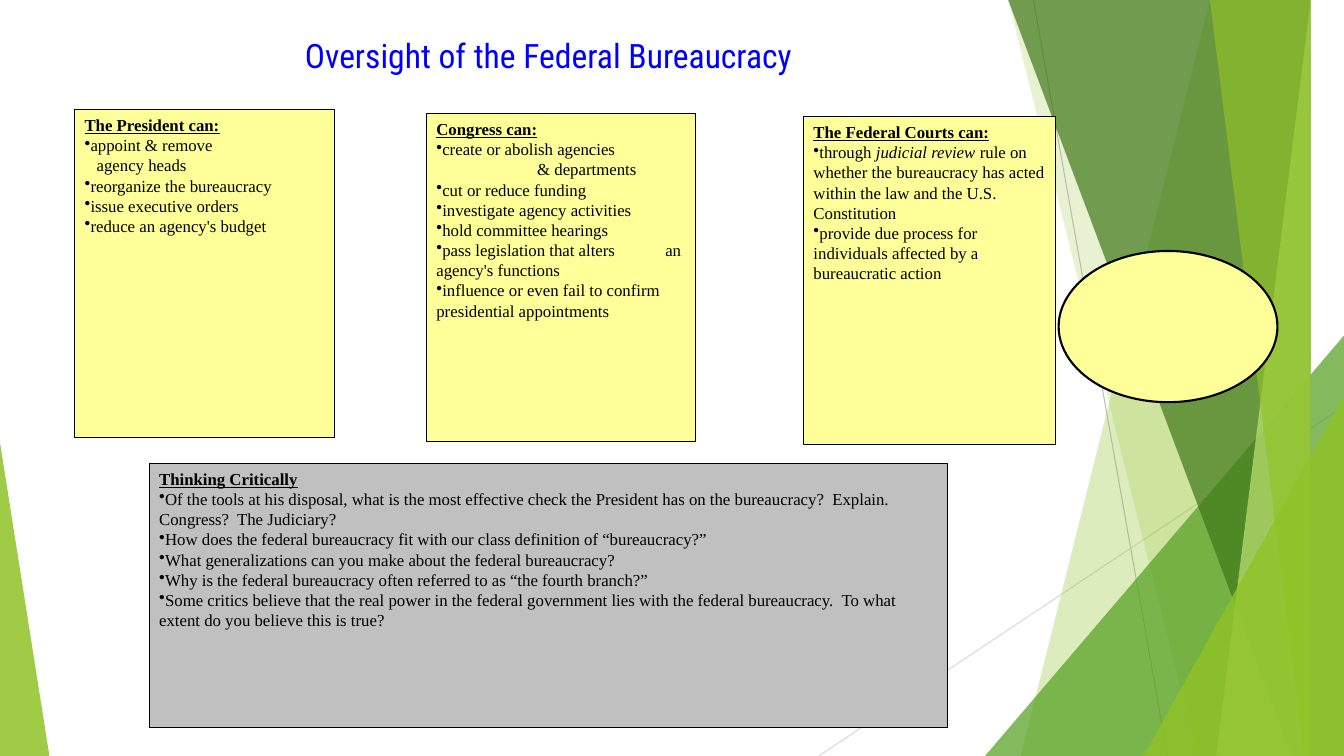
from lxml import etree
from pptx import Presentation
from pptx.dml.color import RGBColor
from pptx.enum.shapes import MSO_CONNECTOR, MSO_SHAPE
from pptx.enum.text import MSO_ANCHOR, MSO_AUTO_SIZE, PP_ALIGN
from pptx.oxml.ns import qn
from pptx.util import Inches, Pt

STRAIGHT = MSO_CONNECTOR.STRAIGHT
TRIANGLE, RECTANGLE, OVAL = MSO_SHAPE.ISOSCELES_TRIANGLE, MSO_SHAPE.RECTANGLE, MSO_SHAPE.OVAL
TOP, MIDDLE = MSO_ANCHOR.TOP, MSO_ANCHOR.MIDDLE
LEFT, CENTER = PP_ALIGN.LEFT, PP_ALIGN.CENTER
NO_AUTOFIT = MSO_AUTO_SIZE.NONE

BLACK = RGBColor(0x00, 0x00, 0x00)
BLUE = RGBColor(0x00, 0x00, 0xFF)
YELLOW = RGBColor(0xFF, 0xFF, 0x99)
GRAY = RGBColor(0xC0, 0xC0, 0xC0)
LINE_GRAY = RGBColor(0xBF, 0xBF, 0xBF)
LINE_PALE = RGBColor(0xD9, 0xD9, 0xD9)
LIME = RGBColor(0x90, 0xC2, 0x26)
GREEN = RGBColor(0x54, 0xA0, 0x21)
DARK_GREEN = RGBColor(0x3F, 0x78, 0x19)
PALE_LIME = RGBColor(0xC0, 0xE4, 0x74)

WIDTH, HEIGHT = 13.33, 7.5


def style_shape(s, color, opacity=100, line_width=None):
    s.shadow.inherit = False
    s.fill.solid()
    s.fill.fore_color.rgb = color
    if opacity < 100:
        srgb = s.fill._xPr.find(".//" + qn("a:srgbClr"))
        etree.SubElement(srgb, qn("a:alpha"), val=str(opacity * 1000))
    if line_width:
        s.line.color.rgb = BLACK
        s.line.width = Pt(line_width)
    else:
        s.line.fill.background()


def add_text(p, text, font="Times New Roman", size=12, color=BLACK, bold=False,
             underline=False, italic=False):
    """Add a formatted run; a newline becomes a line break."""
    for i, line in enumerate(text.split("\n")):
        if i:
            p.add_line_break()
        r = p.add_run()
        r.text = line
        r.font.name, r.font.size = font, Pt(size)
        r.font.bold, r.font.underline, r.font.italic = bold, underline, italic
        r.font.color.rgb = color
    return r


prs = Presentation()
prs.slide_width, prs.slide_height = Inches(WIDTH), Inches(HEIGHT)
slide = prs.slides.add_slide(prs.slide_layouts[5])
shapes = slide.shapes

# Background rays
for x1, y1, x2, y2, color in [(10.25, 0, 11.58, HEIGHT, LINE_GRAY),
                              (WIDTH, 4.03, 8.12, HEIGHT, LINE_PALE)]:
    ray = shapes.add_connector(STRAIGHT, Inches(x1), Inches(y1), Inches(x2), Inches(y2))
    ray.line.color.rgb = color
    ray.line.width = Pt(0.75)
    etree.SubElement(ray._element.spPr, qn("a:effectLst"))

# Bands reach the right edge: top-left x, bottom-left x, colour, opacity.
# Triangles: left, top, width, apex position, colour, opacity.
facets = [
    (12.28, 10.04, LIME, 30),
    (10.5, 11.83, LIME, 20),
    (9.77, 3.33, 3.56, 1, GREEN, 72),
    (10.21, 12.91, DARK_GREEN, 70),
    (13.03, 11.92, PALE_LIME, 70),
    (11.96, 13.18, LIME, 65),
    (11.34, 3.93, 1.99, 1, LIME, 80),
    (0, 4.39, 0.49, 0, LIME, 85),
]
for *geometry, color, opacity in facets:
    if len(geometry) == 2:
        top_x, bottom_x = geometry
        band = shapes.build_freeform(top_x, 0, scale=Inches(1))
        band.add_line_segments([(WIDTH, 0), (WIDTH, HEIGHT), (bottom_x, HEIGHT)])
        s = band.convert_to_shape()
    else:
        x, y, w, apex = geometry
        s = shapes.add_shape(TRIANGLE, Inches(x), Inches(y), Inches(w), Inches(HEIGHT - y))
        s.adjustments[0] = apex
    style_shape(s, color, opacity)

oval = shapes.add_shape(OVAL, Inches(10.5), Inches(2.49), Inches(2.17), Inches(1.5))
style_shape(oval, YELLOW, line_width=1.5)

# Title
title = shapes.title
title.left, title.top, title.width, title.height = map(Inches, (2.65, 0.3, 5.58, 0.5))
tf = title.text_frame
tf.word_wrap, tf.auto_size, tf.vertical_anchor = False, NO_AUTOFIT, MIDDLE
p = tf.paragraphs[0]
p.alignment = CENTER
add_text(p, "Oversight of the Federal Bureaucracy", font="Roboto Condensed", size=24, color=BLUE)

# Boxes: left, top, width, height, fill, tab stops, heading, bullets.
# Asterisks enclose italic words.
boxes = [
    (0.74, 1.09, 2.58, 3.25, YELLOW, [0.12], "The President can:", [
        "appoint & remove\n\tagency heads",
        "reorganize the bureaucracy",
        "issue executive orders",
        "reduce an agency's budget"]),
    (7.97, 1.16, 2.5, 3.25, YELLOW, [0.25], "The Federal Courts can:", [
        "through *judicial review* rule on whether the bureaucracy has acted "
        "within the law and the U.S. Constitution",
        "provide due process for individuals affected by a bureaucratic action"]),
    (4.23, 1.13, 2.67, 3.25, YELLOW, [1, 2.27], "Congress can:", [
        "create or abolish agencies\n\t& departments",
        "cut or reduce funding",
        "investigate agency activities",
        "hold committee hearings",
        "pass legislation that alters\tan agency's functions",
        "influence or even fail to confirm presidential appointments"]),
    (1.48, 4.6, 7.92, 2.62, GRAY, [0.25], "Thinking Critically", [
        "Of the tools at his disposal, what is the most effective check the President "
        "has on the bureaucracy?  Explain.  Congress?  The Judiciary?",
        "How does the federal bureaucracy fit with our class definition of “bureaucracy?”",
        "What generalizations can you make about the federal bureaucracy?",
        "Why is the federal bureaucracy often referred to as “the fourth branch?”",
        "Some critics believe that the real power in the federal government lies with the "
        "federal bureaucracy.  To what extent do you believe this is true?"]),
]
for x, y, w, h, color, tabs, heading, bullets in boxes:
    s = shapes.add_shape(RECTANGLE, Inches(x), Inches(y), Inches(w), Inches(h))
    style_shape(s, color, line_width=0.75)
    tf = s.text_frame
    tf.word_wrap, tf.vertical_anchor = True, TOP
    p = tf.paragraphs[0]
    p.alignment = LEFT
    add_text(p, heading, bold=True, underline=True)
    for bullet in bullets:
        p = tf.add_paragraph()
        p.alignment = LEFT
        pPr = p._p.get_or_add_pPr()
        etree.SubElement(pPr, qn("a:buChar"), char="•")
        tab_list = etree.SubElement(pPr, qn("a:tabLst"))
        for tab in tabs:
            etree.SubElement(tab_list, qn("a:tab"), pos=str(Inches(tab)), algn="l")
        for i, part in enumerate(bullet.split("*")):
            add_text(p, part, italic=i % 2 == 1)

prs.save("out.pptx")
